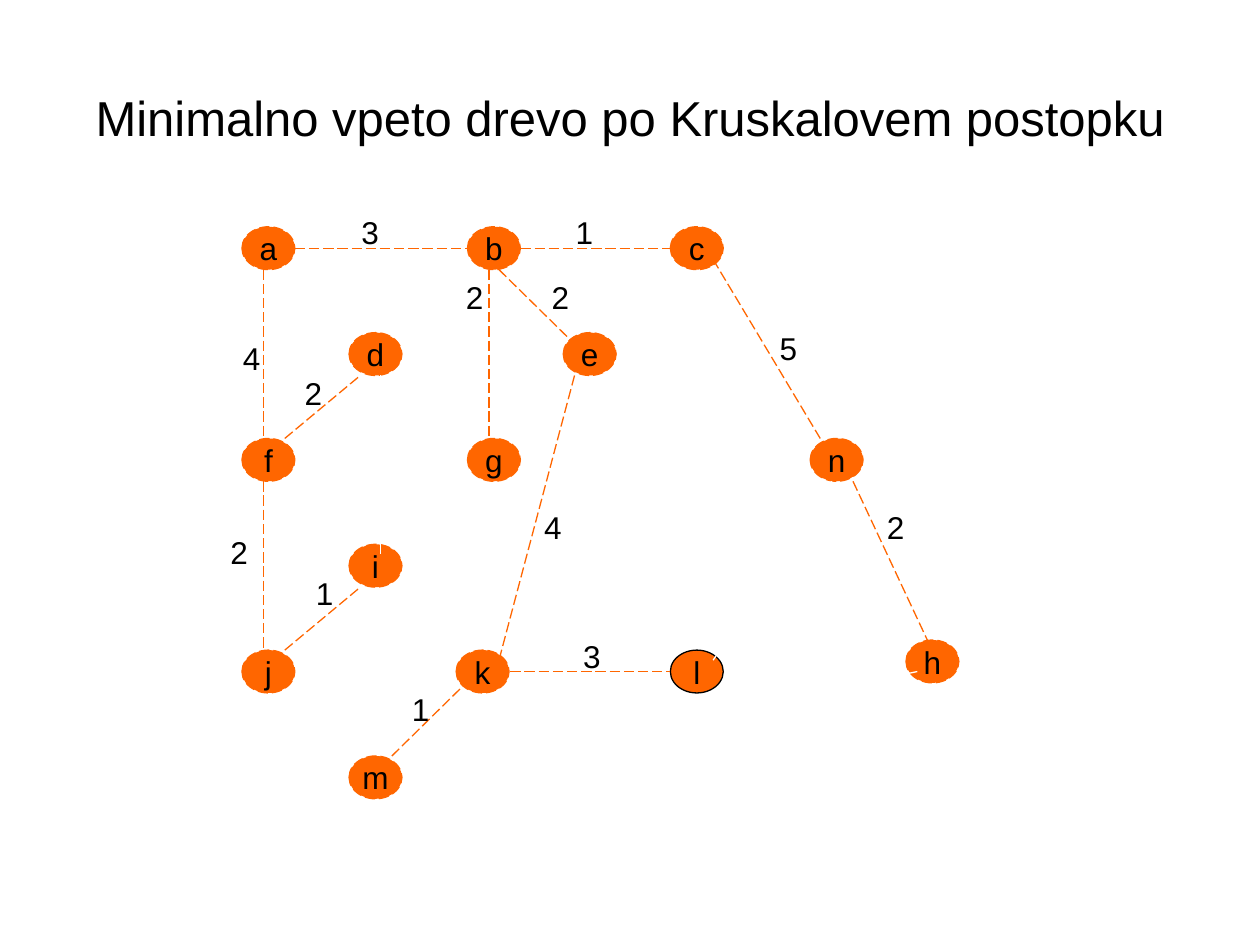
from pptx import Presentation
from pptx.dml.color import RGBColor
from pptx.enum.dml import MSO_LINE
from pptx.enum.shapes import MSO_CONNECTOR, MSO_SHAPE
from pptx.enum.text import MSO_ANCHOR, PP_ALIGN
from pptx.oxml.ns import qn
from pptx.util import Inches, Pt
from lxml import etree

OVAL = MSO_SHAPE.OVAL
STRAIGHT = MSO_CONNECTOR.STRAIGHT
LONG_DASH = MSO_LINE.LONG_DASH
MIDDLE = MSO_ANCHOR.MIDDLE
LEFT, CENTER = PP_ALIGN.LEFT, PP_ALIGN.CENTER

COLORS = {"tree": "FF6600", "faded": "FFFFFF", "ink": "000000"}
FONT = "Arial"
NODE_WIDTH, NODE_HEIGHT = 0.42, 0.34

# Left and top of each node
ROWS = [1.8, 2.64, 3.48, 4.32, 5.16, 6.0]
NODES = {
    "a": (1.92, ROWS[0]), "b": (3.71, ROWS[0]), "c": (5.32, ROWS[0]),
    "d": (2.77, ROWS[1]), "e": (4.47, ROWS[1]),
    "f": (1.92, ROWS[2]), "g": (3.71, ROWS[2]), "n": (6.43, ROWS[2]),
    "i": (2.77, ROWS[3]),
    "j": (1.92, ROWS[4]), "k": (3.62, ROWS[4]), "l": (5.32, ROWS[4]),
    "h": (7.19, 5.08), "m": (2.77, ROWS[5]),
}

# Start, end, weight and left and top of the weight label
TREE_EDGES = [
    ((2.34, 1.97), (3.71, 1.97), "3", (2.77, 1.64)),  # a-b
    ((4.13, 1.97), (5.32, 1.97), "1", (4.47, 1.64)),  # b-c
    ((2.09, 2.14), (2.09, 3.48), "4", (1.83, 2.64)),  # a-f
    ((2.26, 3.48), (2.86, 2.98), "2", (2.32, 2.92)),  # f-d
    ((2.09, 3.82), (2.09, 5.16), "2", (1.73, 4.18)),  # f-j
    ((2.26, 5.16), (2.86, 4.66), "1", (2.41, 4.51)),  # j-i
    ((3.88, 2.14), (3.88, 3.48), "2", (3.60, 2.16)),  # b-g
    ((3.96, 2.14), (4.56, 2.73), "2", (4.28, 2.16)),  # b-e
    ((4.56, 2.98), (3.96, 5.24), "4", (4.22, 3.98)),  # e-k
    ((4.05, 5.33), (5.32, 5.33), "3", (4.53, 5.01)),  # k-l
    ((3.11, 6.00), (3.71, 5.41), "1", (3.17, 5.43)),  # m-k
    ((5.66, 2.06), (6.51, 3.48), "5", (6.09, 2.56)),  # c-n
    ((6.77, 3.82), (7.36, 5.08), "2", (6.94, 3.98)),  # n-h
]

# Rejected edges whose ends show on the nodes
FADED_EDGES = [
    ((6.60, 3.82), (5.66, 5.24)),  # n-l
    ((3.02, 2.98), (3.02, 4.40)),  # d-i
    ((3.20, 6.17), (7.28, 5.33)),  # m-h
]


class GraphPage:
    def __init__(self, page):
        self.page = page

    def set_text(self, box, text, size, align, wrap=False):
        frame = box.text_frame
        frame.text = text
        frame.word_wrap = wrap
        para = frame.paragraphs[0]
        para.alignment = align
        font = para.runs[0].font
        font.name, font.size = FONT, Pt(size)
        font.color.rgb = RGBColor.from_string(COLORS["ink"])

    def stroke(self, line, color, dashed):
        line.color.rgb = RGBColor.from_string(COLORS[color])
        line.width = Pt(0.75)
        if dashed:
            line.dash_style = LONG_DASH

    def label(self, text, left, top, width=0.34, height=0.4, size=18,
              align=LEFT, wrap=False):
        box = self.page.shapes.add_textbox(
            Inches(left), Inches(top), Inches(width), Inches(height))
        self.set_text(box, text, size, align, wrap)
        return box

    def title(self, text):
        box = self.label(text, 0.5, 0.3, 9, 1.25, 28, CENTER, True)
        box.text_frame.vertical_anchor = MIDDLE

    def node(self, name, left, top, outline="tree"):
        oval = self.page.shapes.add_shape(
            OVAL, Inches(left), Inches(top),
            Inches(NODE_WIDTH), Inches(NODE_HEIGHT))
        oval.shadow.inherit = False
        oval.fill.solid()
        oval.fill.fore_color.rgb = RGBColor.from_string(COLORS["tree"])
        self.stroke(oval.line, outline, dashed=outline == "tree")
        self.set_text(oval, name, 18, CENTER)
        oval.text_frame.vertical_anchor = MIDDLE

    def edge(self, start, end, color="tree"):
        points = [Inches(value) for value in start + end]
        connector = self.page.shapes.add_connector(STRAIGHT, *points)
        self.stroke(connector.line, color, dashed=color == "tree")
        etree.SubElement(connector._element.spPr, qn("a:effectLst"))


def main():
    deck = Presentation()
    deck.slide_width, deck.slide_height = Inches(10), Inches(7.5)
    graph = GraphPage(deck.slides.add_slide(deck.slide_layouts[6]))

    # Nodes
    for name, (left, top) in NODES.items():
        graph.node(name, left, top, "ink" if name == "l" else "tree")

    # Edges, rejected ones below the tree
    for start, end in FADED_EDGES:
        graph.edge(start, end, "faded")
    for start, end, _, _ in TREE_EDGES:
        graph.edge(start, end)

    # Weights and title
    for _, _, weight, (left, top) in TREE_EDGES:
        graph.label(weight, left, top)
    graph.title("Minimalno vpeto drevo po Kruskalovem postopku")

    deck.save("out.pptx")


if __name__ == "__main__":
    main()
